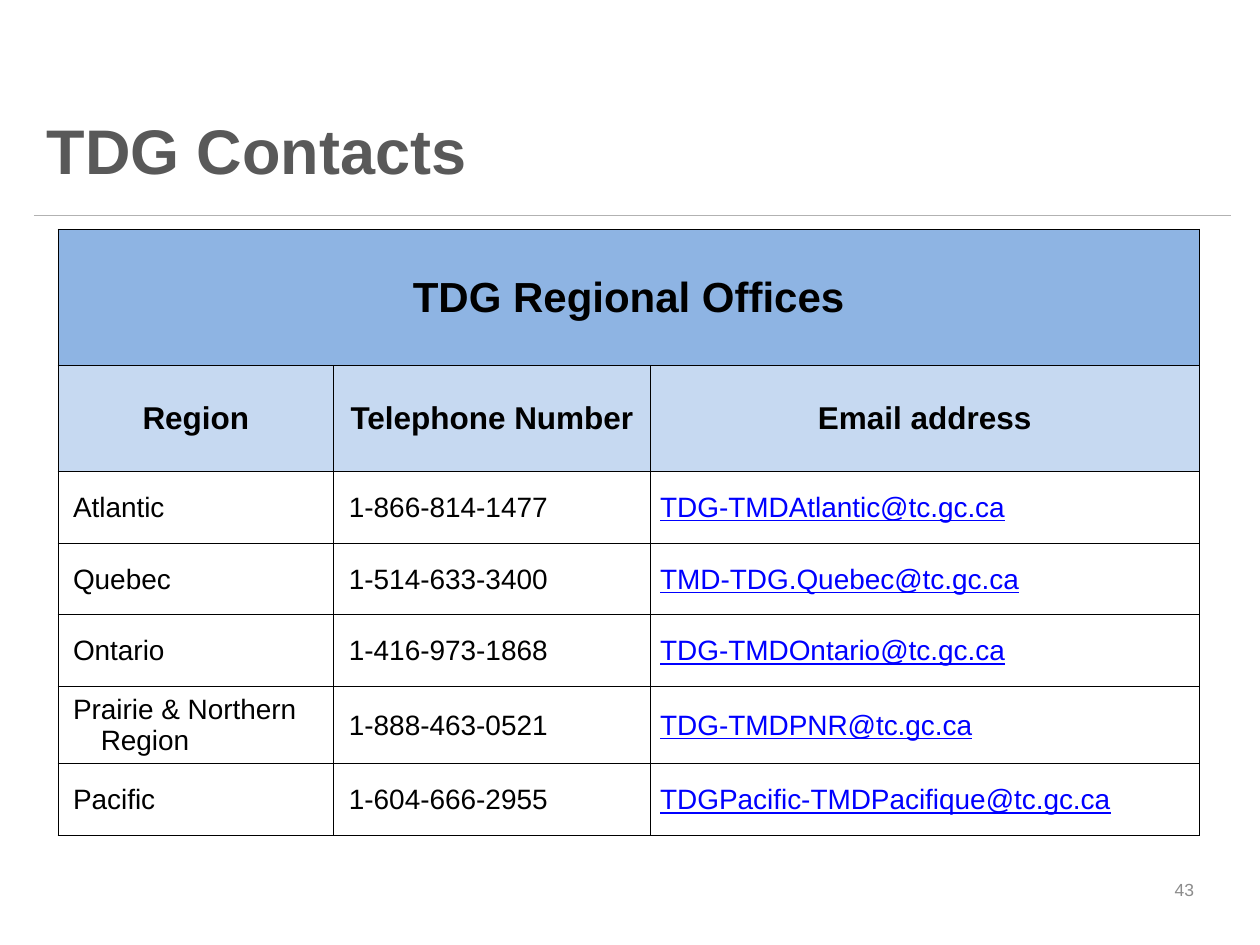
from dataclasses import dataclass

from lxml import etree
from pptx import Presentation
from pptx.dml.color import RGBColor
from pptx.enum.shapes import MSO_CONNECTOR
from pptx.enum.text import MSO_ANCHOR, PP_ALIGN
from pptx.oxml.ns import qn
from pptx.util import Inches, Pt

LEFT, CENTER = PP_ALIGN.LEFT, PP_ALIGN.CENTER
MIDDLE, BOTTOM = MSO_ANCHOR.MIDDLE, MSO_ANCHOR.BOTTOM
STRAIGHT = MSO_CONNECTOR.STRAIGHT
TITLE_ONLY = 5


@dataclass(frozen=True)
class Theme:
    font: str = "Arial"
    title: str = "595959"
    rule: str = "B2B2B2"
    ink: str = "000000"
    email: str = "0000FF"
    number: str = "8C8C8C"
    banner_fill: str = "8EB4E3"
    heading_fill: str = "C6D9F1"
    title_size: int = 36
    banner_size: int = 24
    heading_size: int = 18
    body_size: int = 16
    number_size: int = 10


THEME = Theme()


def style(para, size, color, bold=False, align=LEFT):
    para.alignment = align
    para.font.name = THEME.font
    para.font.size = Pt(size)
    para.font.bold = bold
    para.font.color.rgb = RGBColor.from_string(color)


def add_borders(cell):
    properties = cell._tc.get_or_add_tcPr()
    for side in ("a:lnL", "a:lnR", "a:lnT", "a:lnB"):
        line = etree.SubElement(properties, qn(side), w=str(Pt(0.5)))
        fill = etree.SubElement(line, qn("a:solidFill"))
        etree.SubElement(fill, qn("a:srgbClr"), val=THEME.ink)


deck = Presentation()
deck.slide_width, deck.slide_height = Inches(10), Inches(7.5)
page = deck.slides.add_slide(deck.slide_layouts[TITLE_ONLY])

# Title
title = page.shapes.title
title.left, title.top = Inches(0.19), Inches(0.6)
title.width, title.height = Inches(8.59), Inches(0.94)
frame = title.text_frame
frame.text = "TDG Contacts"
frame.vertical_anchor = BOTTOM
frame.margin_left = Inches(0.18)
style(frame.paragraphs[0], THEME.title_size, THEME.title, bold=True)
frame.paragraphs[0].line_spacing = 0.9

# Rule under the title
rule = page.shapes.add_connector(
    STRAIGHT, Inches(0.27), Inches(1.71), Inches(9.77), Inches(1.71))
rule.line.color.rgb = RGBColor.from_string(THEME.rule)
rule.line.width = Pt(0.75)
etree.SubElement(rule._element.spPr, qn("a:effectLst"))

# Contact table
rows = [
    ("TDG Regional Offices", "", ""),
    ("Region", "Telephone Number", "Email address"),
    ("Atlantic", "1-866-814-1477", "TDG-TMDAtlantic@tc.gc.ca"),
    ("Quebec", "1-514-633-3400", "TMD-TDG.Quebec@tc.gc.ca"),
    ("Ontario", "1-416-973-1868", "TDG-TMDOntario@tc.gc.ca"),
    ("Prairie & Northern Region", "1-888-463-0521", "TDG-TMDPNR@tc.gc.ca"),
    ("Pacific", "1-604-666-2955", "TDGPacific-TMDPacifique@tc.gc.ca"),
]
column_widths = [2.19, 2.51, 4.36]
row_heights = [1.08, 0.84, 0.57, 0.57, 0.57, 0.61, 0.57]
body_insets = [0.12, 0.12, 0.08]
header_styles = [
    (THEME.banner_fill, THEME.banner_size),
    (THEME.heading_fill, THEME.heading_size),
]

table = page.shapes.add_table(
    len(rows), len(column_widths), Inches(0.46), Inches(1.82),
    Inches(sum(column_widths)), Inches(sum(row_heights))).table
table.first_row = table.horz_banding = False
for column, width in zip(table.columns, column_widths):
    column.width = Inches(width)
for row, height in zip(table.rows, row_heights):
    row.height = Inches(height)
table.cell(0, 0).merge(table.cell(0, 2))

for r, texts in enumerate(rows):
    for c, text in enumerate(texts):
        cell = table.cell(r, c)
        add_borders(cell)
        cell.vertical_anchor = MIDDLE
        cell.margin_left = cell.margin_right = cell.margin_top = Inches(0.01)
        cell.margin_bottom = 0
        cell.text = text
        para = cell.text_frame.paragraphs[0]
        if r < len(header_styles):
            fill, size = header_styles[r]
            cell.fill.solid()
            cell.fill.fore_color.rgb = RGBColor.from_string(fill)
            style(para, size, THEME.ink, bold=True, align=CENTER)
            continue
        cell.fill.background()
        cell.margin_left = Inches(body_insets[c])
        is_email = c == 2
        style(para, THEME.body_size, THEME.email if is_email else THEME.ink)
        para.font.underline = is_email
        if c == 0:  # hanging indent for a region name that wraps
            indent = para._p.get_or_add_pPr()
            indent.set("marL", str(Inches(0.22)))
            indent.set("indent", str(-Inches(0.22)))

# Page number
box = page.shapes.add_textbox(
    Inches(9.16), Inches(6.81), Inches(0.48), Inches(0.5))
box.text_frame.word_wrap = True
box.text_frame.vertical_anchor = MIDDLE
box.text_frame.text = "43"
style(box.text_frame.paragraphs[0], THEME.number_size, THEME.number, align=CENTER)

deck.save("out.pptx")
